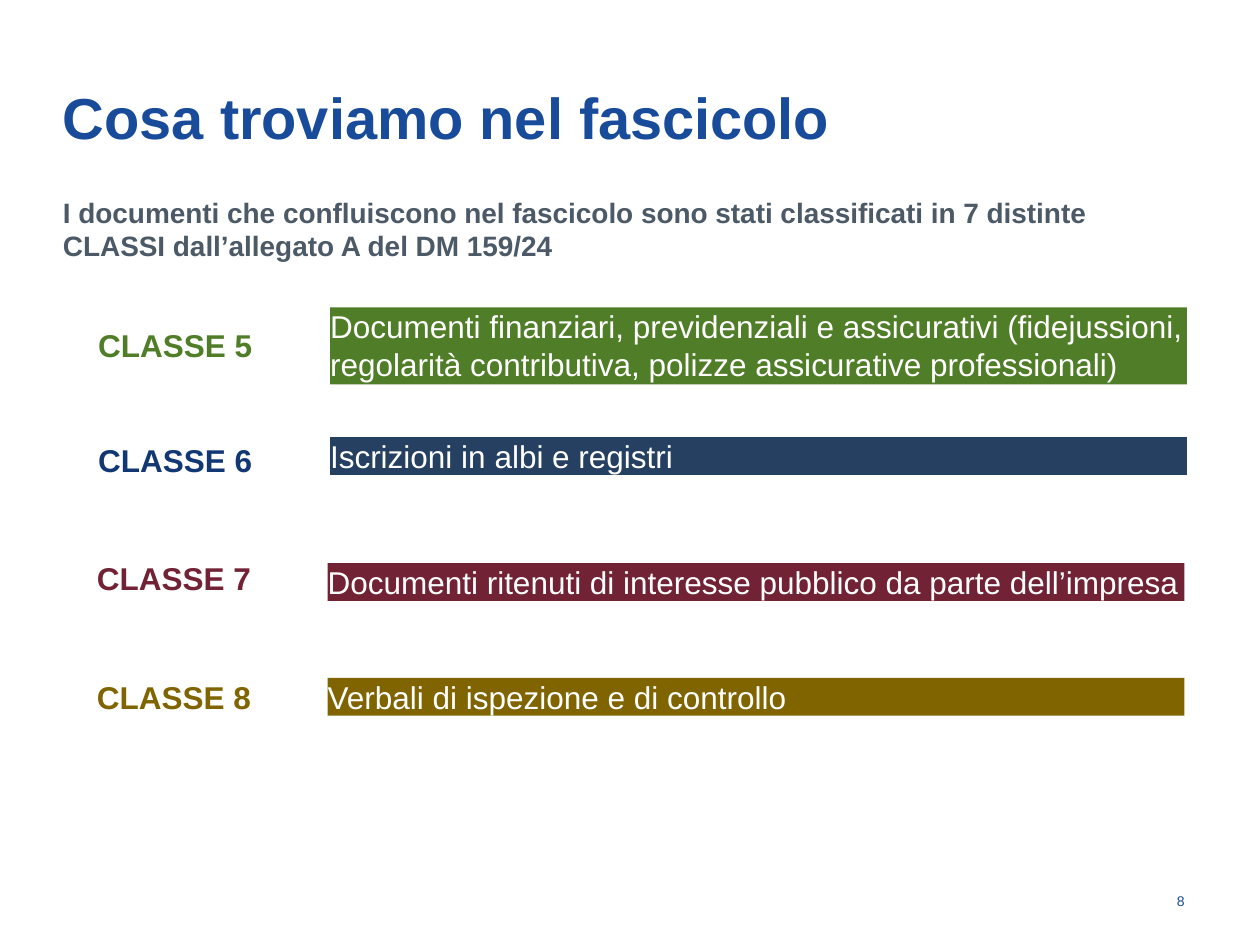
"""Build the slide listing document classes 5 to 8 of the dossier."""
from pptx import Presentation
from pptx.dml.color import RGBColor
from pptx.enum.shapes import MSO_SHAPE
from pptx.enum.text import MSO_ANCHOR, PP_ALIGN
from pptx.util import Inches, Pt

BLUE = RGBColor(0x18, 0x4B, 0x9A)
GRAY = RGBColor(0x4C, 0x59, 0x66)
GREEN = RGBColor(0x50, 0x7D, 0x27)
NAVY = RGBColor(0x12, 0x38, 0x73)
SLATE = RGBColor(0x25, 0x40, 0x61)
WINE = RGBColor(0x71, 0x22, 0x34)
OCHRE = RGBColor(0x80, 0x64, 0x00)
WHITE = RGBColor(0xFF, 0xFF, 0xFF)


def write(shape, text, size, color, bold=False, anchor=MSO_ANCHOR.TOP,
          align=PP_ALIGN.LEFT, margins=(0, 0, 0, 0)):
    frame = shape.text_frame
    frame.word_wrap = True
    frame.vertical_anchor = anchor
    (frame.margin_left, frame.margin_top,
     frame.margin_right, frame.margin_bottom) = map(Inches, margins)
    paragraph = frame.paragraphs[0]
    paragraph.alignment = align
    run = paragraph.add_run()
    run.text = text
    run.font.name = "Arial"
    run.font.size = Pt(size)
    run.font.bold = bold
    run.font.color.rgb = color


presentation = Presentation()
presentation.slide_width = Inches(10)
presentation.slide_height = Inches(7.5)
slide = presentation.slides.add_slide(presentation.slide_layouts[6])


def add_text(left, top, width, height, *content, **options):
    box = slide.shapes.add_textbox(*map(Inches, (left, top, width, height)))
    write(box, *content, **options)


add_text(0.5, 0.3, 9, 1.25, "Cosa troviamo nel fascicolo", 33, BLUE, bold=True,
         anchor=MSO_ANCHOR.MIDDLE, margins=(0, 0, 0.1, 0))
add_text(8.78, 6.95, 0.72, 0.4, "8", 8, BLUE, anchor=MSO_ANCHOR.MIDDLE,
         align=PP_ALIGN.RIGHT, margins=(0.1, 0.05, 0.1, 0.05))
add_text(0.5, 1.55, 8.83, 1.18,
         "I documenti che confluiscono nel fascicolo sono stati classificati "
         "in 7 distinte CLASSI dall’allegato A del DM 159/24",
         16, GRAY, bold=True)

classes = [
    ("CLASSE 5", 0.78, 2.59, GREEN, 2.62, 2.44, 0.61, GREEN,
     "Documenti finanziari, previdenziali e assicurativi (fidejussioni, "
     "regolarità contributiva, polizze assicurative professionali)"),
    ("CLASSE 6", 0.78, 3.5, NAVY, 2.62, 3.47, 0.3, SLATE,
     "Iscrizioni in albi e registri"),
    ("CLASSE 7", 0.77, 4.44, WINE, 2.6, 4.47, 0.3, WINE,
     "Documenti ritenuti di interesse pubblico da parte dell’impresa"),
    ("CLASSE 8", 0.77, 5.38, OCHRE, 2.6, 5.38, 0.3, OCHRE,
     "Verbali di ispezione e di controllo"),
]
for (label, label_left, label_top, label_color,
     bar_left, bar_top, bar_height, bar_color, description) in classes:
    add_text(label_left, label_top, 2.1, 0.3, label, 18, label_color, bold=True)
    bar = slide.shapes.add_shape(MSO_SHAPE.RECTANGLE, Inches(bar_left),
                                 Inches(bar_top), Inches(6.8), Inches(bar_height))
    bar.shadow.inherit = False
    bar.fill.solid()
    bar.fill.fore_color.rgb = bar_color
    bar.line.fill.background()
    write(bar, description, 18, WHITE)

presentation.save("out.pptx")
